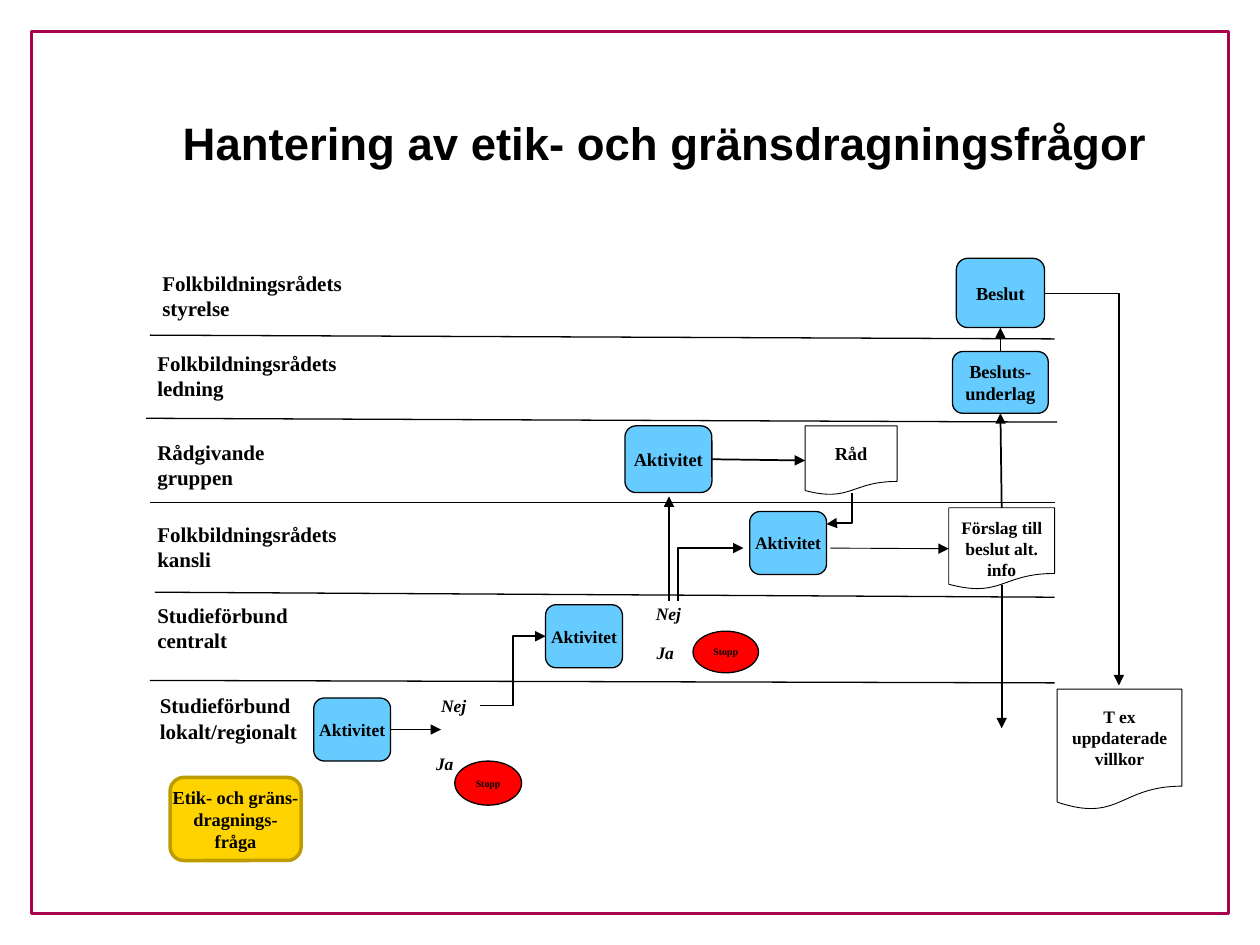
from pptx import Presentation
from pptx.dml.color import RGBColor
from pptx.enum.shapes import MSO_CONNECTOR as CONN, MSO_SHAPE as SHAPE
from pptx.enum.text import MSO_ANCHOR as ANCHOR, PP_ALIGN as ALIGN
from pptx.oxml.ns import qn
from pptx.oxml.xmlchemy import OxmlElement
from pptx.util import Inches, Pt

COLS, ROWS = 100, 75
TOP, LEFT, BOTTOM, RIGHT = range(4)
BLACK, WHITE, BLUE, RED = "000000", "FFFFFF", "66CCFF", "FF0000"
YELLOW, OCHRE, WINE = "FFD300", "BD9C00", "AA014C"


def rgb(value):
    return RGBColor.from_string(value)


class Flow:
    body, heading = "Times New Roman", "Arial"

    def __init__(self, prs):
        self.cell_w, self.cell_h = prs.slide_width / COLS, prs.slide_height / ROWS
        self.s = prs.slides.add_slide(prs.slide_layouts[5])

    def place(self, x, y, w, h):
        return (*self.point(x, y), *self.point(w, h))

    def point(self, x, y):
        return round(x * self.cell_w), round(y * self.cell_h)

    def put_text(self, sp, text, size, align=ALIGN.CENTER, font=None, italic=False):
        tf = sp.text_frame
        tf.text = text
        for p in tf.paragraphs:
            p.alignment = align
            for r in p.runs:
                f = r.font
                f.name, f.size, f.bold, f.italic = font or self.body, Pt(size), True, italic
                f.color.rgb = rgb(BLACK)
        return tf

    def title(self, text, *box):
        sp = self.s.shapes.title
        sp.left, sp.top, sp.width, sp.height = self.place(*box)
        tf = self.put_text(sp, text, 26, ALIGN.LEFT, self.heading)
        tf.vertical_anchor = ANCHOR.BOTTOM

    def shape(self, kind, box, fill, line, weight):
        sp = self.s.shapes.add_shape(kind, *self.place(*box))
        sp.shadow.inherit = False
        if fill:
            sp.fill.solid()
            sp.fill.fore_color.rgb = rgb(fill)
        else:
            sp.fill.background()
        sp.line.color.rgb = rgb(line)
        sp.line.width = Pt(weight)
        return sp

    def node(self, text, *box, kind=SHAPE.ROUNDED_RECTANGLE, fill=BLUE,
             line=BLACK, weight=0.75, size=10.5):
        sp = self.shape(kind, box, fill, line, weight)
        tf = self.put_text(sp, text, size)
        tf.word_wrap = False
        tf.vertical_anchor = ANCHOR.MIDDLE
        return sp

    def stop(self, *box):
        self.node("Stopp", *box, kind=SHAPE.FLOWCHART_CONNECTOR, fill=RED, size=5.6)

    def document(self, text, *box, size=10, top=None):
        sp = self.shape(SHAPE.FLOWCHART_DOCUMENT, box, WHITE, BLACK, 0.5)
        tf = self.put_text(sp, text, size)
        tf.word_wrap = True
        tf.margin_left = tf.margin_right = Inches(0.05)
        tf.vertical_anchor = ANCHOR.MIDDLE
        if top is not None:
            tf.vertical_anchor = ANCHOR.TOP
            tf.margin_top = Inches(top)
        return sp

    def label(self, text, *box):
        sp = self.s.shapes.add_textbox(*self.place(*box))
        self.put_text(sp, text, 12, ALIGN.LEFT).word_wrap = True

    def answer(self, text, *box):
        sp = self.s.shapes.add_textbox(*self.place(*box))
        self.put_text(sp, text, 10, italic=True).word_wrap = False

    def line(self, start, end, weight=0.75, arrow=False, kind=CONN.STRAIGHT):
        c = self.s.shapes.add_connector(kind, *self.point(*start), *self.point(*end))
        c.line.color.rgb = rgb(BLACK)
        c.line.width = Pt(weight)
        spPr = c._element.spPr
        if arrow:
            tail = OxmlElement("a:tailEnd")
            tail.set("type", "triangle")
            spPr.find(qn("a:ln")).append(tail)
        spPr.append(OxmlElement("a:effectLst"))
        return c

    def arrow(self, start, end, source=None, target=None, weight=1):
        c = self.line(start, end, weight, True)
        if source:
            c.begin_connect(*source)
        if target:
            c.end_connect(*target)

    def elbow(self, start, end, corner=False, down_first=False, bend=None):
        if down_first:
            (x1, y1), (x2, y2) = start, end
            mx, my, dx, dy = (x1 + x2) / 2, (y1 + y2) / 2, (x2 - x1) / 2, (y2 - y1) / 2
            start, end = (mx - dy, my + dx), (mx + dy, my - dx)
        c = self.line(start, end, 1, True, CONN.ELBOW)
        spPr = c._element.spPr
        geom = spPr.find(qn("a:prstGeom"))
        if down_first:
            spPr.find(qn("a:xfrm")).set("rot", str(90 * 60000))
        if corner:
            geom.set("prst", "bentConnector2")
        if bend is not None:
            gd = OxmlElement("a:gd")
            gd.set("name", "adj1")
            gd.set("fmla", f"val {round(bend * 100000)}")
            geom.find(qn("a:avLst")).append(gd)


def main():
    prs = Presentation()
    prs.slide_width, prs.slide_height = Inches(10), Inches(7.5)
    flow = Flow(prs)

    flow.shape(SHAPE.RECTANGLE, (2.5, 2.5, 95, 70), None, WINE, 2)
    flow.title("Hantering av etik- och gränsdragningsfrågor", 13.5, 6.8, 79, 7.2)

    for x1, y1, x2, y2 in [
        (11.9, 26.6, 83.7, 26.9), (11.6, 33.2, 83.9, 33.5), (11.9, 39.9, 83.7, 39.9),
        (12.3, 47, 83.7, 47.4), (11.9, 54, 83.7, 54.2),
    ]:
        flow.line((x1, y1), (x2, y2))

    for text, x, y, w in [
        ("Folkbildningsrådets styrelse", 11.9, 21, 16.5),
        ("Folkbildningsrådets ledning", 11.5, 27.3, 17.4),
        ("Rådgivande gruppen", 11.5, 34.4, 10.9),
        ("Folkbildningsrådets kansli", 11.5, 40.9, 16.9),
        ("Studieförbund centralt", 11.5, 47.3, 12.4),
        ("Studieförbund lokalt/regionalt", 11.7, 54.5, 13.2),
    ]:
        flow.label(text, x, y, w, 5)

    flow.node("Etik- och gräns-\ndragnings-\nfråga", 13.5, 61.7, 10.4, 6.6,
              fill=YELLOW, line=OCHRE, weight=2)
    local, *_ = [
        flow.node("Aktivitet", x, y, 6.1, 5, size=10)
        for x, y in [(24.9, 55.4), (43.3, 48), (59.5, 40.6)]
    ]
    group = flow.node("Aktivitet", 49.6, 33.8, 6.9, 5.3)
    basis = flow.node("Besluts-\nunderlag", 75.6, 27.9, 7.6, 4.9)
    decision = flow.node("Beslut", 75.9, 20.5, 7, 5.5)
    advice = flow.document("Råd", 63.9, 33.8, 7.3, 5.5, size=10.5)
    proposal = flow.document("Förslag till beslut alt. info", 75.3, 40.3, 8.4, 6.5, top=0.07)
    flow.document("T ex uppdaterade villkor", 83.9, 54.7, 9.9, 9.6)
    flow.stop(55, 50.1, 5.2, 3.3)
    flow.stop(36.1, 60.4, 5.3, 3.5)

    for text, x, y, w in [("Nej", 33.9, 54.7, 4.2), ("Ja", 33.6, 59.3, 3.4),
                          ("Nej", 50.8, 47.4, 4.5), ("Ja", 51.1, 50.5, 3.4)]:
        flow.answer(text, x, y, w, 2.7)

    flow.arrow((31, 57.8), (35, 57.9), source=(local, RIGHT))
    flow.arrow((53.1, 47.7), (53.1, 39.4))
    flow.arrow((56.5, 36.5), (63.9, 36.5), (group, RIGHT), (advice, LEFT))
    flow.arrow((65.9, 43.5), (75.3, 43.7), target=(proposal, LEFT), weight=0.5)
    flow.arrow((79.5, 40.3), (79.4, 32.8), (proposal, TOP), (basis, BOTTOM))
    flow.arrow((79.4, 27.9), (79.4, 26), (basis, TOP), (decision, BOTTOM))
    flow.arrow((79.5, 46.4), (79.5, 57.8))

    flow.elbow((38.1, 56), (43.3, 50.5))
    flow.elbow((53.8, 47.7), (59, 43.5), corner=True, down_first=True)
    flow.elbow((67.6, 39.1), (65.6, 41.6), down_first=True, bend=0.97)
    flow.elbow((82.9, 23.3), (88.8, 54.4), corner=True)

    prs.save("out.pptx")


if __name__ == "__main__":
    main()
